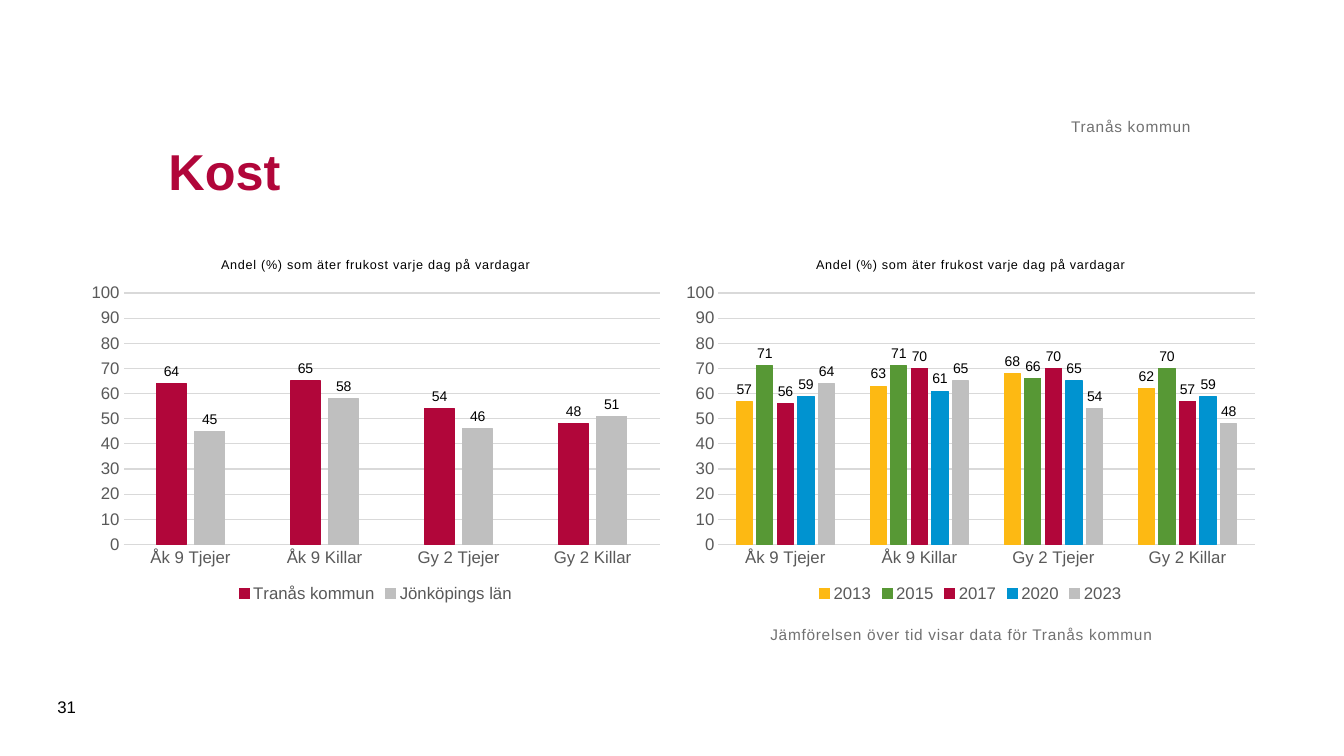
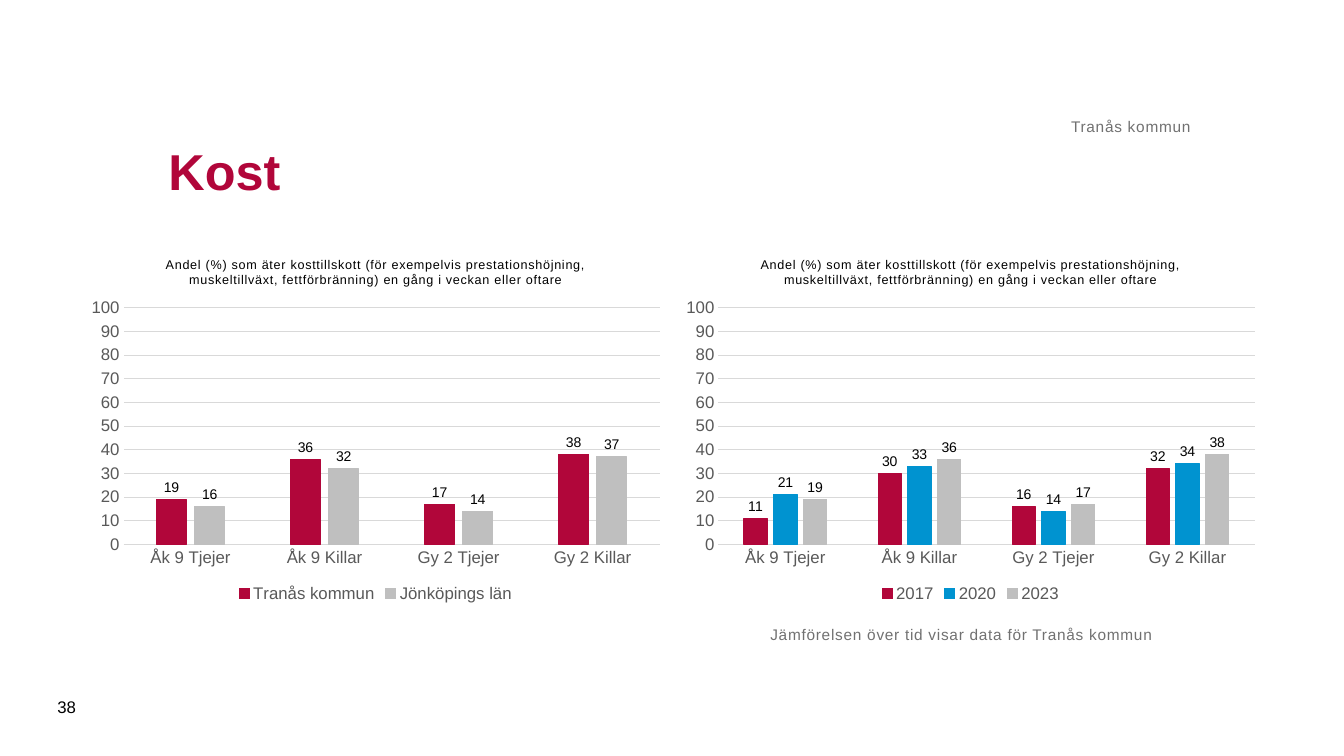
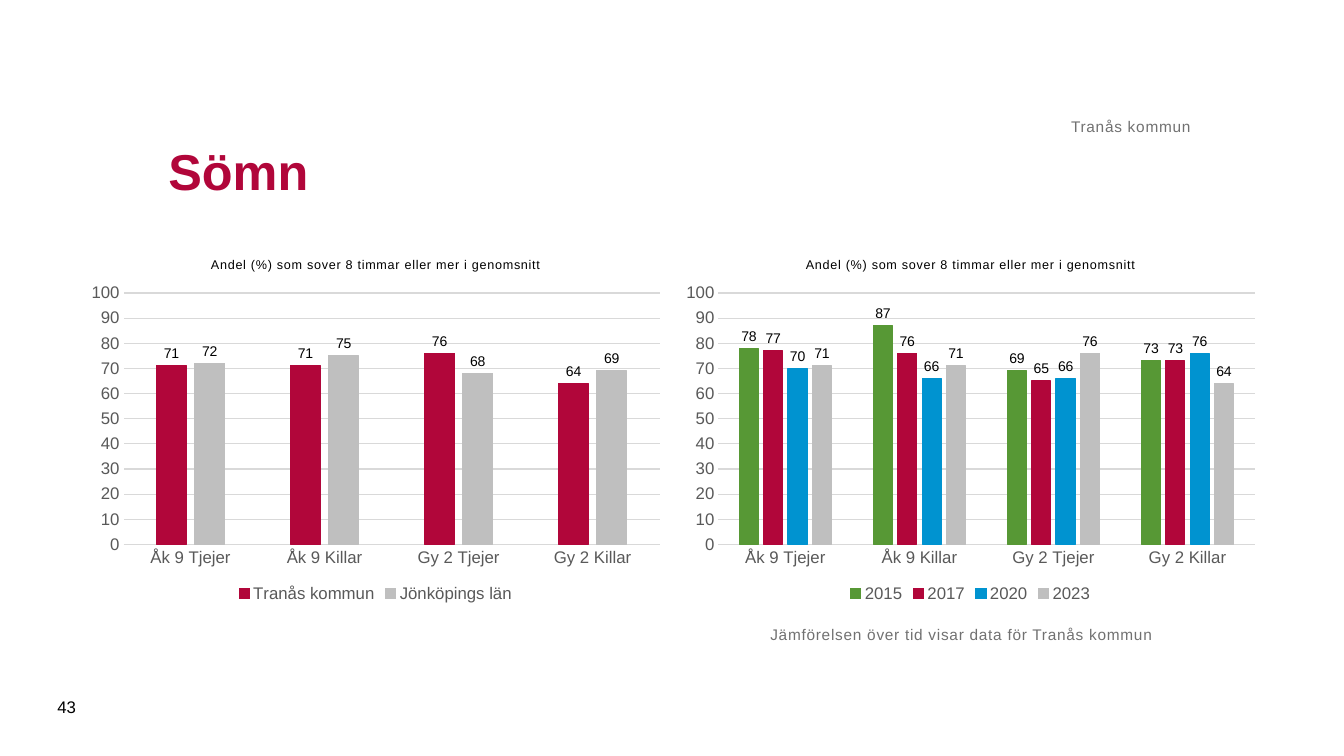
from pptx import Presentation
from pptx.chart.data import CategoryChartData
from pptx.dml.color import RGBColor
from pptx.enum.chart import XL_CHART_TYPE, XL_LABEL_POSITION, XL_LEGEND_POSITION, XL_TICK_MARK
from pptx.enum.text import MSO_ANCHOR, MSO_AUTO_SIZE, PP_ALIGN
from pptx.util import Inches, Pt

COLUMNS = XL_CHART_TYPE.COLUMN_CLUSTERED
OUTSIDE = XL_LABEL_POSITION.OUTSIDE_END
BOTTOM_LEGEND = XL_LEGEND_POSITION.BOTTOM
NO_TICK = XL_TICK_MARK.NONE
TOP, MIDDLE, BOTTOM = MSO_ANCHOR.TOP, MSO_ANCHOR.MIDDLE, MSO_ANCHOR.BOTTOM
LEFT, RIGHT = PP_ALIGN.LEFT, PP_ALIGN.RIGHT

# Shared style
FONT = "Arial"
COLORS = {"red": "B1063A", "gray": "BFBFBF", "yellow": "FDB913", "green": "579835",
          "blue": "0093D0", "note": "717171", "axis": "595959", "grid": "D9D9D9",
          "black": "000000"}
SERIES_COLORS = {"Tranås kommun": "red", "Jönköpings län": "gray", "2013": "yellow",
                 "2015": "green", "2017": "red", "2020": "blue", "2023": "gray"}
NUMBER_FORMAT = "#,##0;#,##0"
CHART_LEFTS = (0.79, 6.69)
CHART_TOP, CHART_W, CHART_H = 2.4, 5.87, 3.62

# Content: each slide compares with the county, then over time
MUNICIPALITY = "Tranås kommun"
TIME_NOTE = "Jämförelsen över tid visar data för Tranås kommun"
GROUPS = ["Åk 9 Tjejer", "Åk 9 Killar", "Gy 2 Tjejer", "Gy 2 Killar"]
SLIDES = [
    {"title": "Kost", "number": "31",
     "question": "Andel (%) som äter frukost varje dag på vardagar",
     "charts": [
         {"Tranås kommun": (64, 65, 54, 48), "Jönköpings län": (45, 58, 46, 51)},
         {"2013": (57, 63, 68, 62), "2015": (71, 71, 66, 70), "2017": (56, 70, 70, 57),
          "2020": (59, 61, 65, 59), "2023": (64, 65, 54, 48)}]},
    {"title": "Kost", "number": "38",
     "question": "Andel (%) som äter kosttillskott (för exempelvis prestationshöjning, "
                 "muskeltillväxt, fettförbränning) en gång i veckan eller oftare",
     "charts": [
         {"Tranås kommun": (19, 36, 17, 38), "Jönköpings län": (16, 32, 14, 37)},
         {"2017": (11, 30, 16, 32), "2020": (21, 33, 14, 34), "2023": (19, 36, 17, 38)}]},
    {"title": "Sömn", "number": "43",
     "question": "Andel (%) som sover 8 timmar eller mer i genomsnitt",
     "charts": [
         {"Tranås kommun": (71, 71, 76, 64), "Jönköpings län": (72, 75, 68, 69)},
         {"2015": (78, 87, 69, 73), "2017": (77, 76, 65, 73), "2020": (70, 66, 66, 76),
          "2023": (71, 71, 76, 64)}]},
]


def rgb(name):
    return RGBColor.from_string(COLORS[name])


def style_font(font, size, color, bold=False):
    font.name, font.size, font.bold = FONT, Pt(size), bold
    font.color.rgb = rgb(color)


def style_line(line, color):
    line.color.rgb = rgb(color)
    line.width = Pt(0.75)


def add_run(p, text, size, color, bold=False, spacing=0):
    r = p.add_run()
    r.text = text
    style_font(r.font, size, color, bold)
    if spacing:
        r._r.get_or_add_rPr().set("spc", str(spacing))


def fill_box(sp, box, text, size, color, anchor=TOP, align=LEFT, bold=False,
             spacing=0, inset=True):
    sp.left, sp.top, sp.width, sp.height = (Inches(v) for v in box)
    tf = sp.text_frame
    tf.word_wrap, tf.auto_size, tf.vertical_anchor = True, MSO_AUTO_SIZE.NONE, anchor
    if not inset:
        tf.margin_left = tf.margin_top = tf.margin_right = tf.margin_bottom = 0
    p = tf.paragraphs[0]
    p.alignment = align
    add_run(p, text, size, color, bold, spacing)


def add_text(slide, box, *args, **kwargs):
    sp = slide.shapes.add_textbox(*(Inches(v) for v in box))
    fill_box(sp, box, *args, **kwargs)


def add_column_chart(slide, left, question, series):
    data = CategoryChartData(number_format=NUMBER_FORMAT)
    data.categories = GROUPS
    for name, values in series.items():
        data.add_series(name, values)
    chart = slide.shapes.add_chart(COLUMNS, Inches(left), Inches(CHART_TOP),
                                   Inches(CHART_W), Inches(CHART_H), data).chart
    style_font(chart.font, 10, "black")

    # Title and legend
    chart.has_title = True
    chart.chart_title.include_in_layout = False
    add_run(chart.chart_title.text_frame.paragraphs[0], question, 9, "black", spacing=50)
    chart.has_legend = True
    chart.legend.position = BOTTOM_LEGEND
    chart.legend.include_in_layout = False
    style_font(chart.legend.font, 12, "axis")

    # Axes
    for axis in (chart.category_axis, chart.value_axis):
        axis.major_tick_mark = axis.minor_tick_mark = NO_TICK
        style_font(axis.tick_labels.font, 12, "axis")
    style_line(chart.category_axis.format.line, "grid")
    values = chart.value_axis
    values.minimum_scale, values.maximum_scale, values.major_unit = 0, 100, 10
    values.tick_labels.number_format = NUMBER_FORMAT
    values.tick_labels.number_format_is_linked = False
    values.format.line.fill.background()
    style_line(values.major_gridlines.format.line, "grid")

    # Columns and their labels
    plot = chart.plots[0]
    plot.gap_width, plot.overlap, plot.vary_by_categories = 219, -27, False
    for column in plot.series:
        color = SERIES_COLORS[column.name]
        column.format.fill.solid()
        column.format.fill.fore_color.rgb = rgb(color)
        style_line(column.format.line, color)
        labels = column.data_labels
        labels.show_value, labels.position = True, OUTSIDE
        labels.number_format, labels.number_format_is_linked = NUMBER_FORMAT, False
        style_font(labels.font, 10, "black")


def build_slide(prs, content):
    slide = prs.slides.add_slide(prs.slide_layouts[5])
    for left, series in zip(CHART_LEFTS, content["charts"]):
        add_column_chart(slide, left, content["question"], series)
    fill_box(slide.shapes.title, (1.57, 0.98, 10.24, 1.42), content["title"], 36, "red",
             anchor=MIDDLE, bold=True)
    add_text(slide, (7.64, 6.2, 5.31, 0.94), TIME_NOTE, 11, "note", spacing=50, inset=False)
    add_text(slide, (1.57, 0.62, 10.24, 0.73), MUNICIPALITY, 11, "note",
             anchor=BOTTOM, align=RIGHT, spacing=50, inset=False)
    add_text(slide, (0.47, 6.81, 0.57, 0.4), content["number"], 12, "black", anchor=MIDDLE)


def main():
    prs = Presentation()
    prs.slide_width, prs.slide_height = Inches(13.33), Inches(7.5)
    for content in SLIDES:
        build_slide(prs, content)
    prs.save("out.pptx")


if __name__ == "__main__":
    main()
